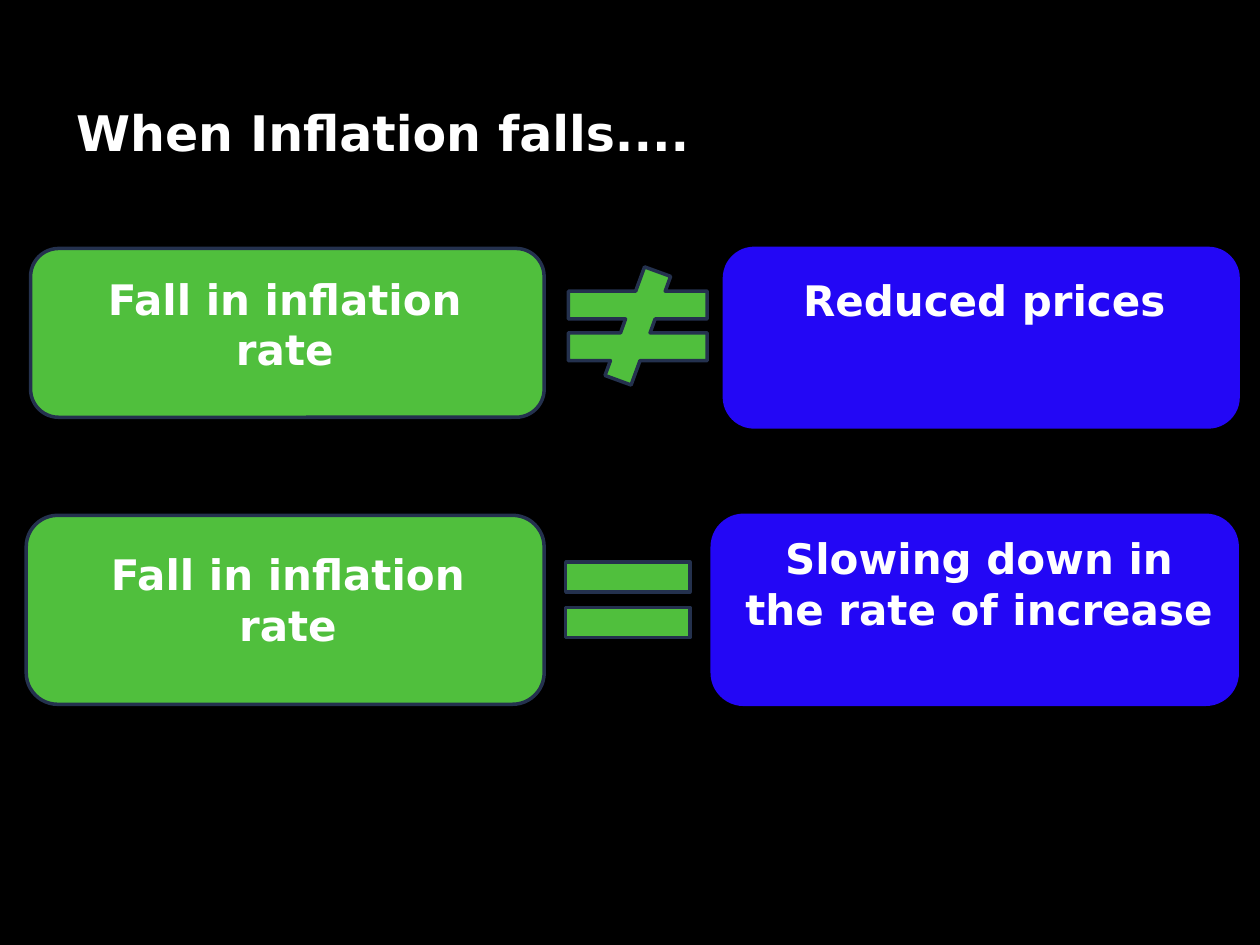
from pptx import Presentation
from pptx.dml.color import RGBColor
from pptx.enum.shapes import MSO_SHAPE
from pptx.enum.text import MSO_ANCHOR, PP_ALIGN
from pptx.util import Pt

RECT, ROUND = MSO_SHAPE.RECTANGLE, MSO_SHAPE.ROUNDED_RECTANGLE
EQUAL, UNEQUAL = MSO_SHAPE.MATH_EQUAL, MSO_SHAPE.MATH_NOT_EQUAL
TOP, MIDDLE = MSO_ANCHOR.TOP, MSO_ANCHOR.MIDDLE
LEFT, CENTER = PP_ALIGN.LEFT, PP_ALIGN.CENTER

THEME = {
    "black": "000000", "white": "FFFFFF", "green": "50BF3D",
    "navy": "24314E", "blue": "2307F5",
    "font": "DejaVu Sans", "title": 28, "label": 24, "line": 2, "thin": 0.75,
}
WIDTH, HEIGHT = 720, 540

TITLE = ("When Inflation falls....", (36.5, 26, 648, 98.5))
# Each card: text, card box, label box; boxes are left, top, width, height
ROWS = [
    {"cause": ("Fall in inflation rate", (17.5, 142, 293.5, 96.5), (32.5, 152.5, 260.5, 65.5)),
     "sign": (UNEQUAL, (310.5, 152.5, 108, 67.5)),
     "effect": ("Reduced prices", (414, 142, 293.5, 102), (422.5, 153.5, 280, 36))},
    {"cause": ("Fall in inflation rate", (15, 294.5, 296, 108), (25.5, 310, 278, 65.5)),
     "sign": (EQUAL, (310.5, 306, 96.5, 73.5)),
     "effect": ("Slowing down in the rate of increase", (407, 294.5, 300, 108),
                (417, 301, 285, 65.5))},
]


def color(name):
    return RGBColor.from_string(THEME[name])


def draw(slide, kind, box, fill, edge=None, weight="line"):
    shape = slide.shapes.add_shape(kind, *map(Pt, box))
    shape.shadow.inherit = False
    shape.fill.solid()
    shape.fill.fore_color.rgb = color(fill)
    if edge:
        shape.line.color.rgb = color(edge)
        shape.line.width = Pt(THEME[weight])
    else:
        shape.line.fill.background()
    return shape


def write(shape, text, size, align, anchor):
    frame = shape.text_frame
    frame.word_wrap = True
    frame.vertical_anchor = anchor
    para = frame.paragraphs[0]
    para.alignment = align
    run = para.add_run()
    run.text = text
    style = {"name": THEME["font"], "size": Pt(THEME[size]), "bold": True}
    for key, value in style.items():
        setattr(run.font, key, value)
    run.font.color.rgb = color("white")


def card(slide, item, fill, edge, rim=None):
    text, outer, inner = item
    draw(slide, ROUND, outer, fill, edge)
    label = draw(slide, RECT, inner, fill, rim, "thin")
    write(label, text, "label", CENTER, TOP)


def main():
    deck = Presentation()
    deck.slide_width, deck.slide_height = Pt(WIDTH), Pt(HEIGHT)
    slide = deck.slides.add_slide(deck.slide_layouts[6])
    draw(slide, RECT, (0, 0, WIDTH, HEIGHT), "black", "black")
    text, box = TITLE
    write(slide.shapes.add_textbox(*map(Pt, box)), text, "title", LEFT, MIDDLE)
    for row in ROWS:
        card(slide, row["cause"], "green", "navy")
        card(slide, row["effect"], "blue", "blue", "blue")
        draw(slide, *row["sign"], "green", "navy")
    deck.save("out.pptx")


if __name__ == "__main__":
    main()
